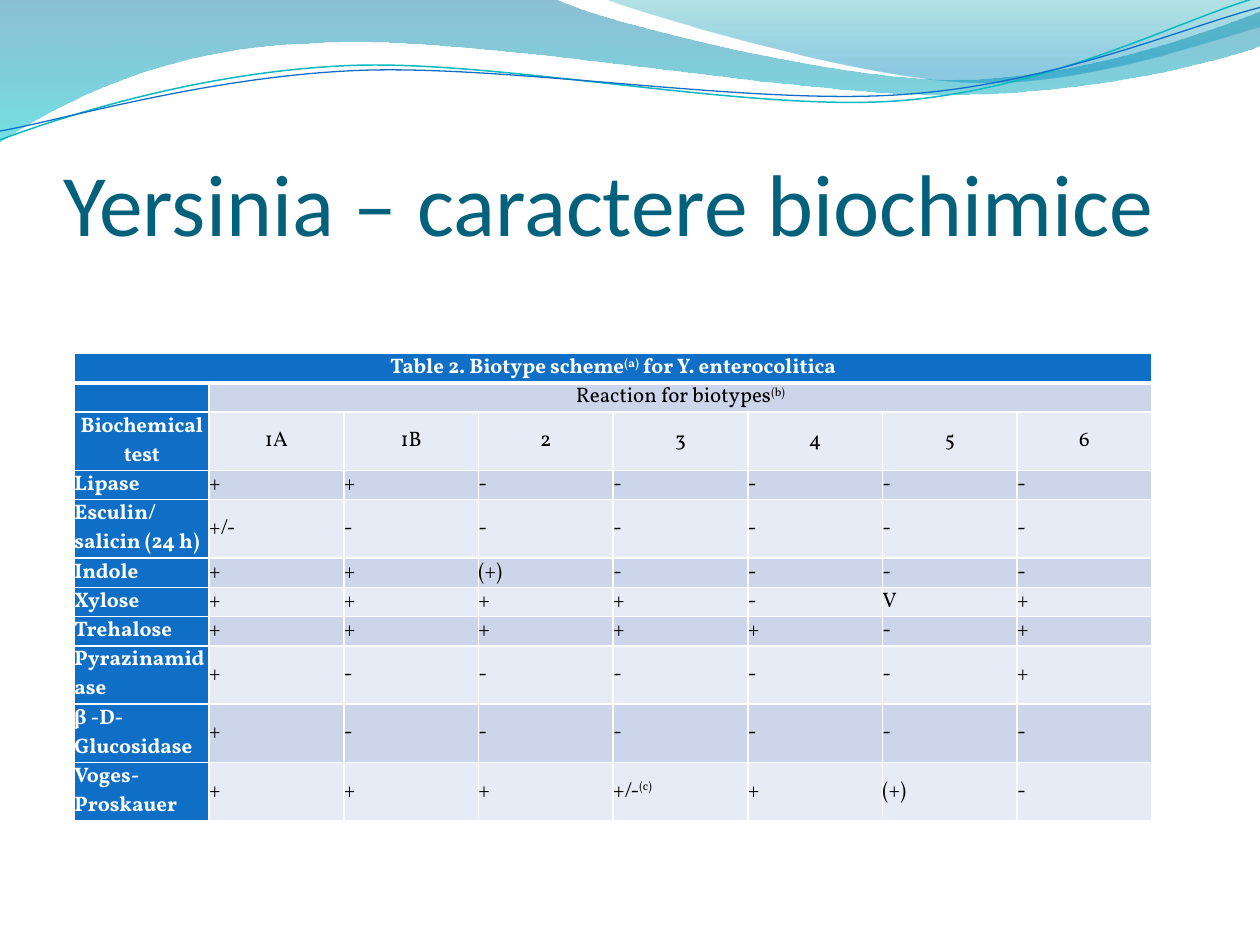
import math
from typing import NamedTuple, Optional

from lxml import etree
from pptx import Presentation
from pptx import util as u
from pptx.dml.color import RGBColor
from pptx.enum import text
from pptx.oxml import ns

WHITE = RGBColor(0xFF, 0xFF, 0xFF)
BLACK = RGBColor(0, 0, 0)
BLUE = RGBColor(0x0F, 0x6F, 0xC6)
AQUA = RGBColor(0x0A, 0xB8, 0xBF)
TEAL = RGBColor(0x04, 0x61, 0x7B)
BAND = RGBColor(0xCC, 0xD5, 0xEA)
PALE = RGBColor(0xE7, 0xEB, 0xF5)
NAVY = RGBColor(0, 0x74, 0xA1)
CYAN = RGBColor(0, 0xC6, 0xCF)
JADE = RGBColor(0, 0xA1, 0xA9)
SKY = RGBColor(0, 0x8B, 0xBF)


class Stop(NamedTuple):
    place: int
    color: RGBColor
    alpha: int


class Wave(NamedTuple):
    """A start point, then steps of 2 (line) or 6 (curve) numbers, in inches."""
    start: tuple
    steps: list
    stops: tuple = ()
    color: Optional[RGBColor] = None
    width: float = 0
    mid: tuple = (0, 0)
    turn: float = 0


WAVES = [
    Wave((0, 0), [
        (4.4, -0.01),
        (4.76, 0.17, 6.64, 0.63, 7.58, 0.63),
        (8.53, 0.63, 9.58, 0.26, 10, 0.09),
        (10.01, 0.36),
        (9.83, 0.44, 8.7, 0.76, 7.46, 0.75),
        (6.22, 0.75, 3.82, 0.28, 2.57, 0.34),
        (1.29, 0.36, 0.46, 0.83, -0.01, 1.13),
    ], stops=(Stop(0, NAVY, 45), Stop(100, CYAN, 55))),
    Wave((4.79, -0.01), [
        (5.09, 0.11, 6.82, 0.62, 7.69, 0.65),
        (8.56, 0.69, 9.61, 0.32, 10, 0.21),
        (10, 0),
    ], stops=(Stop(0, JADE, 30), Stop(80, SKY, 45))),
    Wave((0, 1.11), [
        (0.48, 0.93, 1.58, 0.57, 2.77, 0.52),
        (3.95, 0.47, 5.93, 0.89, 7.13, 0.8),
        (8.33, 0.71, 9.38, 0.15, 9.98, -0.02),
    ], color=AQUA, width=0.85, mid=(4.99, 0.58), turn=-2.7),
    Wave((0, 1.04), [
        (0.47, 0.96, 1.64, 0.61, 2.83, 0.56),
        (4.03, 0.51, 5.97, 0.84, 7.17, 0.75),
        (8.36, 0.67, 9.41, 0.21, 10, 0.06),
    ], color=BLUE, width=0.75, mid=(5, 0.59), turn=-2.7),
]

# Text between two carets is superscript.
HEAD = "Table 2. Biotype scheme^(a)^ for Y. enterocolitica"
GROUP = "Reaction for biotypes^(b)^"
ROWS = [
    ("Biochemical test", "1A 1B 2 3 4 5 6"),
    ("Lipase", "+ + - - - - -"),
    ("Esculin/salicin (24 h)", "+/- - - - - - -"),
    ("Indole", "+ + (+) - - - -"),
    ("Xylose", "+ + + + - V +"),
    ("Trehalose", "+ + + + + - +"),
    ("Pyrazinamidase", "+ - - - - - +"),
    ("β -D-Glucosidase", "+ - - - - - -"),
    ("Voges-Proskauer", "+ + + +/-^(c)^ + (+) -"),
]
COLS = 8


def level(wave: Wave) -> list:
    """List every point of the wave, with its turn taken out."""
    flat = [n for step in (wave.start, *wave.steps) for n in step]
    angle = math.radians(-wave.turn)
    cos, sin = math.cos(angle), math.sin(angle)
    pts = []
    for x, y in zip(flat[::2], flat[1::2]):
        dx, dy = x - wave.mid[0], y - wave.mid[1]
        pts.append((u.Cm(2.54 * (wave.mid[0] + dx * cos - dy * sin)),
                    u.Cm(2.54 * (wave.mid[1] + dx * sin + dy * cos))))
    return pts


def bend(shape, steps: list) -> None:
    """Join each three line points of a curved step into one Bezier curve."""
    lines = iter(list(shape._element.iter(ns.qn("a:lnTo"))))
    for step in steps:
        first = next(lines)
        if len(step) == 6:
            first.tag = ns.qn("a:cubicBezTo")
            for _ in range(2):
                extra = next(lines)
                first.append(extra[0])
                extra.getparent().remove(extra)


def blend(shape, stops: tuple) -> None:
    """Fill from top to bottom with partly clear colours."""
    shape.fill.background()
    old = shape._element.spPr.find(ns.qn("a:noFill"))
    grad = etree.Element(ns.qn("a:gradFill"), rotWithShape="1")
    group = etree.SubElement(grad, ns.qn("a:gsLst"))
    for stop in stops:
        node = etree.SubElement(group, ns.qn("a:gs"), pos=str(stop.place * 1000))
        tint = etree.SubElement(node, ns.qn("a:srgbClr"), val=str(stop.color))
        etree.SubElement(tint, ns.qn("a:alpha"), val=str(stop.alpha * 1000))
    etree.SubElement(grad, ns.qn("a:lin"), ang="5400000", scaled="0")
    old.getparent().replace(old, grad)


def draw_wave(slide, wave: Wave) -> None:
    pts = level(wave)
    draft = slide.shapes.build_freeform(*pts[0])
    draft.add_line_segments(pts[1:], close=bool(wave.stops))
    shape = draft.convert_to_shape()
    bend(shape, wave.steps)
    shape.rotation = wave.turn
    shape.shadow.inherit = False
    if wave.stops:
        blend(shape, wave.stops)
        shape.line.fill.background()
    else:
        shape.fill.background()
        shape.line.color.rgb = wave.color
        shape.line.width = u.Pt(wave.width)


def edge(cell, base: float) -> None:
    """Give the cell white borders; base is the width of the bottom one."""
    props = cell._tc.get_or_add_tcPr()
    for i, side in enumerate("LRTB"):
        width = u.Pt(base if side == "B" else 1)
        line = etree.Element(ns.qn(f"a:ln{side}"), w=str(width))
        fill = etree.SubElement(line, ns.qn("a:solidFill"))
        etree.SubElement(fill, ns.qn("a:srgbClr"), val=str(WHITE))
        props.insert(i, line)


def fill_cell(cell, words: str, back: RGBColor, center: bool, base: float) -> None:
    cell.fill.solid()
    cell.fill.fore_color.rgb = back
    edge(cell, base)
    cell.margin_left = cell.margin_right = cell.margin_top = cell.margin_bottom = 0
    cell.vertical_anchor = text.MSO_ANCHOR.MIDDLE
    para = cell.text_frame.paragraphs[0]
    para.alignment = text.PP_ALIGN.CENTER if center else text.PP_ALIGN.LEFT
    if not words:
        para._p.get_or_add_endParaRPr().set("sz", "1200")
        return
    for i, part in enumerate(words.split("^")):
        if not part:
            continue
        run = para.add_run()
        run.text = part
        font = run.font
        font.name, font.size = "Vollkorn", u.Pt(12)
        font.bold = back == BLUE
        font.color.rgb = WHITE if back == BLUE else BLACK
        if i % 2:
            font._element.set("baseline", "30000")


def draw_table(slide) -> None:
    grid = [[HEAD] + [""] * (COLS - 1), ["", GROUP] + [""] * (COLS - 2)]
    grid += [[name] + marks.split() for name, marks in ROWS]
    frame = slide.shapes.add_table(len(grid), COLS, u.Cm(1.5), u.Cm(7.13),
                                   u.Cm(21.72), u.Cm(8.13))
    table = frame.table
    table.first_row = table.horz_banding = False
    for line in table.rows:
        line.height = u.Cm(0.01)  # rows grow to fit their text
    frame.height = u.Cm(8.13)

    for r, words in enumerate(grid):
        for c, word in enumerate(words):
            back = BLUE if r == 0 or c == 0 else BAND if r % 2 else PALE
            fill_cell(table.cell(r, c), word, back, r < 3, 1 if r else 3)
    for r in (0, 1):
        table.cell(r, r).merge(table.cell(r, COLS - 1))


def set_title(slide) -> None:
    title = slide.shapes.title
    title.left, title.top = u.Cm(1.27), u.Cm(1.95)
    title.width, title.height = u.Cm(22.86), u.Cm(3.17)
    frame = title.text_frame
    frame.text = "Yersinia – caractere biochimice"
    frame.word_wrap = True
    frame.auto_size = text.MSO_AUTO_SIZE.NONE
    frame.vertical_anchor = text.MSO_ANCHOR.BOTTOM
    frame.margin_left = frame.margin_right = frame.margin_bottom = 0
    frame.margin_top = u.Cm(0.13)
    para = frame.paragraphs[0]
    para.alignment = text.PP_ALIGN.LEFT
    font = para.runs[0].font
    font.name, font.size, font.color.rgb = "Calibri", u.Pt(50), TEAL
    slide.shapes._spTree.append(title._element)  # in front of the waves


def main() -> None:
    deck = Presentation()
    deck.slide_width, deck.slide_height = u.Cm(25.4), u.Cm(19.05)
    slide = deck.slides.add_slide(deck.slide_layouts[5])
    for wave in WAVES:
        draw_wave(slide, wave)
    set_title(slide)
    draw_table(slide)
    deck.save("out.pptx")


if __name__ == "__main__":
    main()
